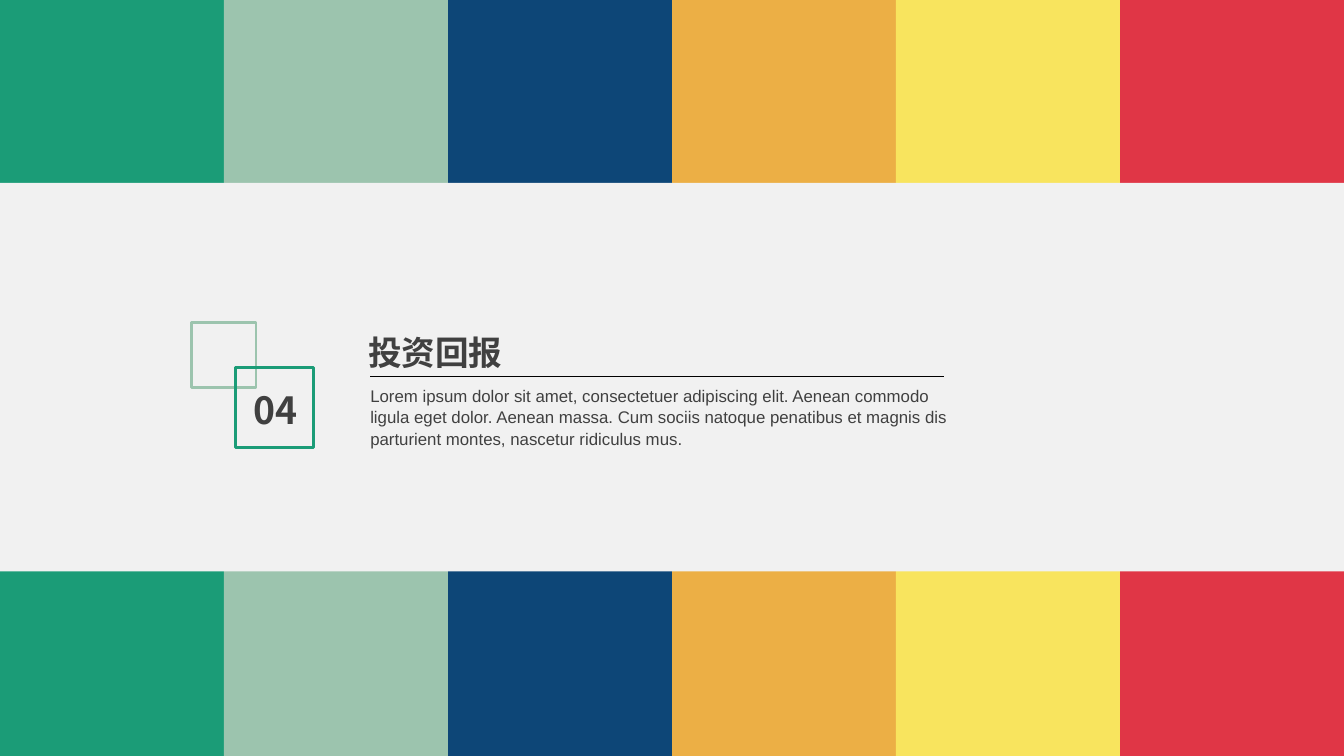
from pptx import Presentation
from pptx.dml.color import RGBColor
from pptx.enum.shapes import MSO_CONNECTOR, MSO_SHAPE
from pptx.enum.text import MSO_ANCHOR, MSO_AUTO_SIZE, PP_ALIGN
from pptx.oxml.ns import qn
from pptx.util import Pt
from lxml import etree

GREEN = RGBColor(0x1B, 0x9C, 0x77)
SAGE = RGBColor(0x9C, 0xC4, 0xAE)
NAVY = RGBColor(0x0D, 0x46, 0x77)
ORANGE = RGBColor(0xEC, 0xAF, 0x45)
YELLOW = RGBColor(0xF8, 0xE4, 0x5E)
RED = RGBColor(0xE0, 0x36, 0x46)
PAPER = RGBColor(0xF1, 0xF1, 0xF1)
INK = RGBColor(0x40, 0x40, 0x40)
BLACK = RGBColor(0, 0, 0)

HEADING_FONT = "Noto Sans CJK SC"
BODY_FONT = "Arial"
WIDTH, HEIGHT = 720, 405
STRIPES = (GREEN, SAGE, NAVY, ORANGE, YELLOW, RED)


class SlideBuilder:
    def __init__(self, slide):
        self.slide = slide
        self.shapes = slide.shapes
        background = slide.background.fill
        background.solid()
        background.fore_color.rgb = PAPER

    def rectangle(self, left, top, width, height, fill=None, outline=None):
        shape = self.shapes.add_shape(
            MSO_SHAPE.RECTANGLE, Pt(left), Pt(top), Pt(width), Pt(height))
        shape.shadow.inherit = False
        if fill is None:
            shape.fill.background()
        else:
            shape.fill.solid()
            shape.fill.fore_color.rgb = fill
        if outline is None:
            shape.line.fill.background()
        else:
            shape.line.color.rgb = outline
            shape.line.width = Pt(1.5)

    def rule(self, left, right, top):
        line = self.shapes.add_connector(
            MSO_CONNECTOR.STRAIGHT, Pt(left), Pt(top), Pt(right), Pt(top))
        line.line.color.rgb = BLACK
        line.line.width = Pt(0.5)
        etree.SubElement(line.element.spPr, qn("a:effectLst"))

    def title(self, text, left, top, width, height):
        """Fill the title placeholder and bring it to the front."""
        shape = self.shapes.title
        shape.left, shape.top = Pt(left), Pt(top)
        shape.width, shape.height = Pt(width), Pt(height)
        shape.element.getparent().append(shape.element)
        self.add_text(shape, text, 18, HEADING_FONT, bold=True, wrap=False)

    def text_box(self, text, left, top, width, height, size, font, **style):
        shape = self.shapes.add_textbox(Pt(left), Pt(top), Pt(width), Pt(height))
        self.add_text(shape, text, size, font, **style)

    def add_text(self, shape, text, size, font, bold=False, wrap=True, spacing=1.0):
        frame = shape.text_frame
        frame.word_wrap = wrap
        frame.auto_size = MSO_AUTO_SIZE.NONE
        frame.vertical_anchor = MSO_ANCHOR.MIDDLE
        paragraph = frame.paragraphs[0]
        paragraph.alignment = PP_ALIGN.LEFT
        paragraph.line_spacing = spacing
        run = paragraph.add_run()
        run.text = text
        run.font.size = Pt(size)
        run.font.bold = bold
        run.font.name = font
        run.font.color.rgb = INK
        for properties in shape.element.iter(qn("a:rPr")):
            etree.SubElement(properties, qn("a:ea")).set("typeface", font)


def main():
    presentation = Presentation()
    presentation.slide_width, presentation.slide_height = Pt(WIDTH), Pt(HEIGHT)
    title_only = presentation.slide_layouts[5]
    builder = SlideBuilder(presentation.slides.add_slide(title_only))

    stripe_width = WIDTH / len(STRIPES)
    for index, color in enumerate(STRIPES):
        builder.rectangle(index * stripe_width, 0, stripe_width, HEIGHT, fill=color)
    builder.rectangle(-2, 97.9, WIDTH + 2, 208.2, fill=PAPER)

    builder.text_box("04", 128.9, 203.8, 39.6, 31.7, 20, HEADING_FONT,
                     bold=True, wrap=False)
    builder.title("投资回报", 190, 174.2, 87.8, 28.8)
    builder.text_box(
        "Lorem ipsum dolor sit amet, consectetuer adipiscing elit. Aenean commodo "
        "ligula eget dolor. Aenean massa. Cum sociis natoque penatibus et magnis dis "
        "parturient montes, nascetur ridiculus mus.",
        191.3, 203, 333.4, 40.3, 9, BODY_FONT, spacing=1.07)
    builder.rule(198.4, 505.7, 201.6)
    builder.rectangle(102.8, 172.7, 34.4, 34.8, outline=SAGE)
    builder.rectangle(126.1, 197, 42, 42.6, outline=GREEN)

    presentation.save("out.pptx")


if __name__ == "__main__":
    main()
